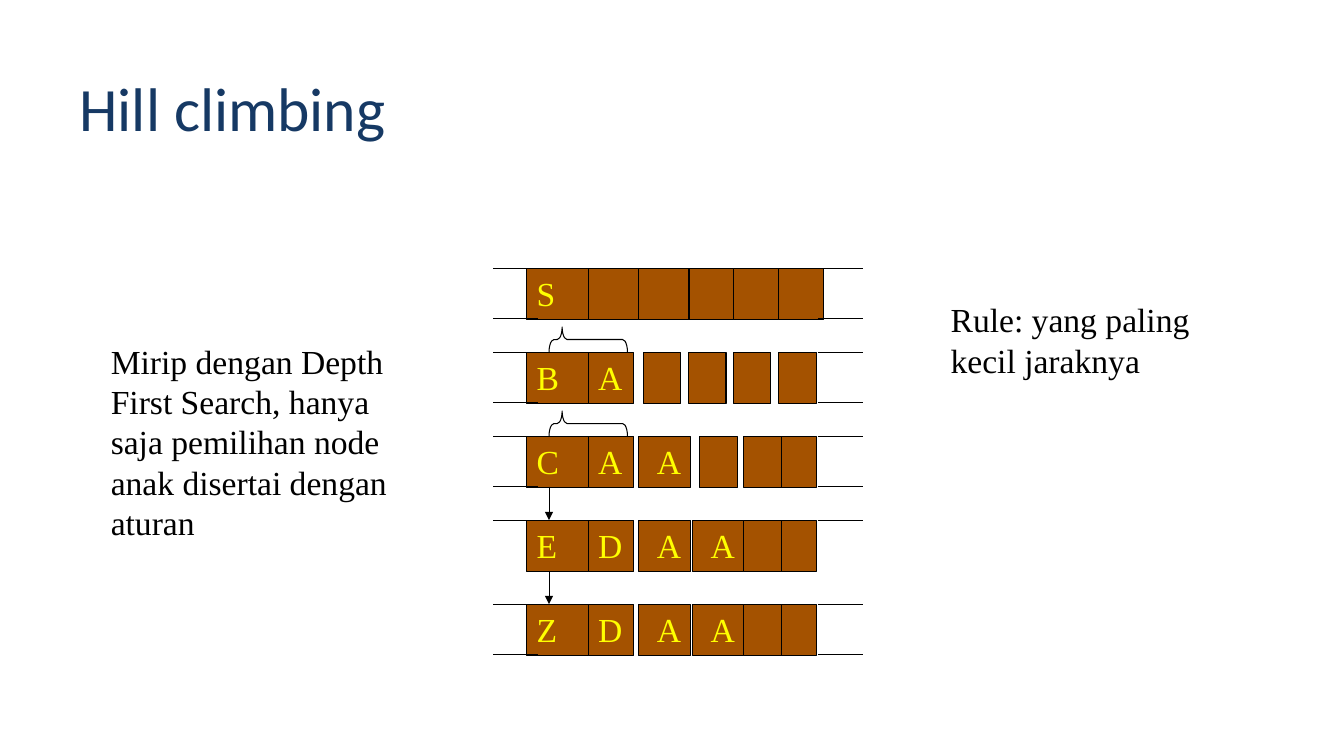
from lxml import etree
from pptx import Presentation
from pptx.dml.color import RGBColor
from pptx.enum.shapes import MSO_CONNECTOR, MSO_SHAPE
from pptx.enum.text import MSO_ANCHOR, MSO_AUTO_SIZE, PP_ALIGN
from pptx.oxml.ns import qn
from pptx.util import Inches, Pt

RECTANGLE, BRACE = MSO_SHAPE.RECTANGLE, MSO_SHAPE.LEFT_BRACE
STRAIGHT = MSO_CONNECTOR.STRAIGHT
TOP, MIDDLE = MSO_ANCHOR.TOP, MSO_ANCHOR.MIDDLE
GROW, LEFT = MSO_AUTO_SIZE.SHAPE_TO_FIT_TEXT, PP_ALIGN.LEFT

BODY_FONT = "Times New Roman"
BLACK, BROWN, YELLOW, NAVY = "000000", "A45200", "FFFF00", "163964"

UNIT = 1 / 9
ROW_STEP, CELL_HEIGHT, RAIL_GAP = 7.5, 4.6, 4.53
RAIL_LENGTH, RIGHT_RAIL = 4, 29
HEAD_COLUMN, HEAD_WIDTH = 3, 5.75
SECOND = (8.5, 4.05)
THIRD, FOURTH = (13, 4.6), (17.8, 4.6)
TAIL = [(22.4, 3.35), (25.5, 3.35)]
ARROW_COLUMN, BRACE_SPAN, BRACE_DEPTH = 5, 7, 2.25

QUEUES = [
    ("S", [(c, 4.5) for c in (8.5, 13, 17, 21, 25)]),
    ("BA", [SECOND] + [(c, 3.35) for c in (13.4, 17.45, 21.45, 25.5)]),
    ("CAA", [SECOND, THIRD, (18.45, 3.35)] + TAIL),
    ("EDAA", [SECOND, THIRD, FOURTH] + TAIL),
    ("ZDAA", [SECOND, THIRD, FOURTH] + TAIL),
]
ROWS_WITHOUT_LOWER_RAIL = {3}
BRACED_ROWS, ARROW_ROWS = (1, 2), (3, 4)


def color(hex_value):
    return RGBColor.from_string(hex_value)


def write(shape, text, size, font_name, hex_value, anchor=TOP, wrap=True):
    frame = shape.text_frame
    frame.word_wrap = wrap
    frame.vertical_anchor = anchor
    paragraph = frame.paragraphs[0]
    paragraph.text = text
    paragraph.alignment = LEFT
    paragraph.font.size = Pt(size)
    paragraph.font.name = font_name
    paragraph.font.color.rgb = color(hex_value)
    return frame


def outline(shape):
    shape.line.color.rgb = color(BLACK)
    shape.line.width = Pt(0.75)


def draw_title(slide, box):
    title = slide.shapes.add_textbox(*map(Inches, box))
    frame = write(title, "Hill climbing", 44, "Calibri", NAVY, MIDDLE)
    frame.paragraphs[0].line_spacing = 0.9


def draw_note(slide, box, text):
    note = slide.shapes.add_textbox(*map(Inches, box))
    write(note, text, 24, BODY_FONT, BLACK).auto_size = GROW


def draw_line(slide, start, end, arrow=False):
    line = slide.shapes.add_connector(STRAIGHT, *map(Inches, start + end))
    outline(line)
    if arrow:
        etree.SubElement(line.line._get_or_add_ln(), qn("a:tailEnd"), type="triangle")
    etree.SubElement(line._element.spPr, qn("a:effectLst"))


def draw_cell(slide, box, label, is_head):
    cell = slide.shapes.add_shape(RECTANGLE, *map(Inches, box))
    cell.shadow.inherit = False
    cell.fill.solid()
    cell.fill.fore_color.rgb = color(BROWN)
    outline(cell)
    if label:
        frame = write(cell, label, 24, BODY_FONT, YELLOW, wrap=is_head)
        frame.auto_size = GROW
        if box[2] == THIRD[1] * UNIT:
            frame.margin_left = Inches(0.18)


def draw_queue(slide, left, top, labels, followers, has_lower_rail):
    cells = [(HEAD_COLUMN, HEAD_WIDTH)] + followers
    for index in [0, *range(len(followers), 0, -1)]:
        column, width = cells[index]
        box = (left + column * UNIT, top, width * UNIT, CELL_HEIGHT * UNIT)
        draw_cell(slide, box, labels[index:index + 1], index == 0)
    for rail_y in (top, top + RAIL_GAP * UNIT)[:1 + has_lower_rail]:
        for column in (0, RIGHT_RAIL):
            start = left + column * UNIT
            draw_line(slide, (start, rail_y), (start + RAIL_LENGTH * UNIT, rail_y))


def draw_brace(slide, left, bottom):
    span, depth = BRACE_SPAN * UNIT, BRACE_DEPTH * UNIT
    box = (left + (span - depth) / 2, bottom - (span + depth) / 2, depth, span)
    brace = slide.shapes.add_shape(BRACE, *map(Inches, box))
    brace.rotation = 90
    brace.adjustments[0], brace.adjustments[1] = 0.194, 0.833
    brace.shadow.inherit = False
    brace.fill.background()
    outline(brace)


def draw_search_queues(slide, left, top):
    arrow_x = left + ARROW_COLUMN * UNIT
    for row, (labels, followers) in enumerate(QUEUES):
        row_top = top + row * ROW_STEP * UNIT
        has_lower_rail = row not in ROWS_WITHOUT_LOWER_RAIL
        draw_queue(slide, left, row_top, labels, followers, has_lower_rail)
        if row in BRACED_ROWS:
            draw_brace(slide, arrow_x, row_top)
        if row in ARROW_ROWS:
            gap = (ROW_STEP - RAIL_GAP) * UNIT
            draw_line(slide, (arrow_x, row_top - gap), (arrow_x, row_top), arrow=True)


def main():
    presentation = Presentation()
    presentation.slide_width = Inches(13.33)
    presentation.slide_height = Inches(7.5)
    slide = presentation.slides.add_slide(presentation.slide_layouts[6])
    draw_title(slide, (0.69, 0.48, 9.67, 1.25))
    draw_search_queues(slide, 4.89, 2.66)
    draw_note(slide, (1, 3.33, 3.11, 2.12),
              "Mirip dengan Depth First Search, hanya saja pemilihan node "
              "anak disertai dengan aturan")
    draw_note(slide, (9.33, 2.92, 3.15, 0.91), "Rule: yang paling kecil jaraknya")
    presentation.save("out.pptx")


if __name__ == "__main__":
    main()
